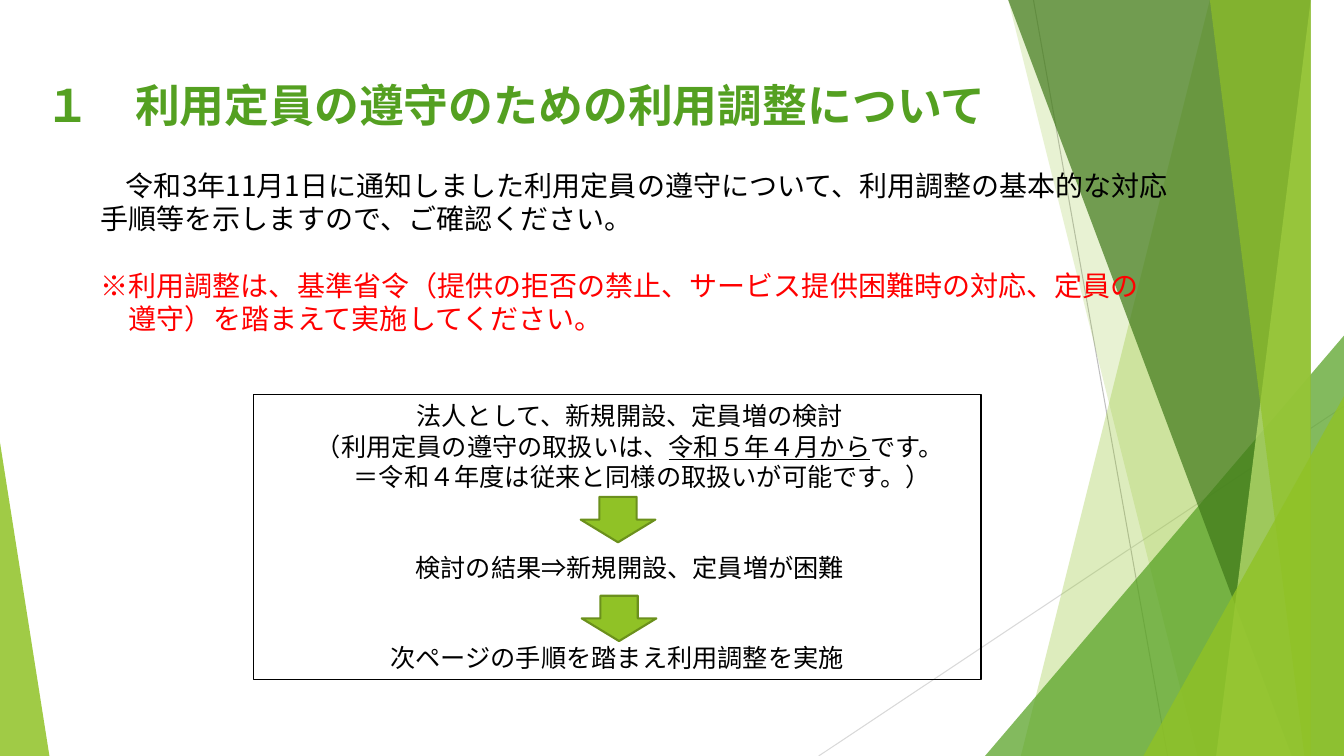
import dataclasses
import typing

import lxml.etree
import pptx
import pptx.dml.color
import pptx.enum.shapes
import pptx.enum.text
import pptx.oxml.ns
import pptx.util

Inches = pptx.util.Inches
Pt = pptx.util.Pt
MSO_SHAPE = pptx.enum.shapes.MSO_SHAPE
ANCHOR = pptx.enum.text.MSO_ANCHOR
ALIGN = pptx.enum.text.PP_ALIGN
qn = pptx.oxml.ns.qn

WIDTH, HEIGHT = 13.33, 7.5
FONT = "Noto Sans CJK JP"
LINE_RATIO = 1.2
COLORS = {
    "lime": "90C226", "green": "54A021", "forest": "3F7819", "pale": "C0E474",
    "arrow edge": "6B901C", "gray": "BFBFBF", "light gray": "D9D9D9",
    "black": "000000", "red": "FF0000",
}


@dataclasses.dataclass
class Ray:
    start: tuple[float, float]
    end: tuple[float, float]
    color: str


@dataclasses.dataclass
class Band:
    """A band from the top edge to the bottom edge, open to the right."""
    top_x: float
    bottom_x: float
    color: str
    opacity: int


@dataclasses.dataclass
class Corner:
    """A right triangle standing on the bottom edge; peak is 0 (left) or 1 (right)."""
    left: float
    top: float
    width: float
    peak: int
    color: str
    opacity: int


@dataclasses.dataclass
class Line:
    """A paragraph; odd phrases are underlined, indents are in inches."""
    phrases: list[str]
    margin: float = 0
    first_indent: float = 0
    lines_before: int = 0


RAYS = [
    Ray((10.25, 0), (11.58, HEIGHT), "gray"),
    Ray((WIDTH, 4.03), (8.12, HEIGHT), "light gray"),
]
FACETS = [
    Band(12.28, 10.04, "lime", 30),
    Band(10.5, 11.83, "lime", 20),
    Corner(9.77, 3.33, 3.56, 1, "green", 72),
    Band(10.21, 12.91, "forest", 70),
    Band(13.03, 11.92, "pale", 70),
    Band(11.96, 13.18, "lime", 65),
    Corner(11.34, 3.93, 1.99, 1, "lime", 80),
    Corner(0, 4.39, 0.49, 0, "lime", 85),
]
TITLE = [Line(["１　利用定員の遵守のための利用調整について"])]
INTRO = [Line(["令和3年11月1日に通知しました利用定員の遵守について、"
               "利用調整の基本的な対応手順等を示しますので、ご確認ください。"], first_indent=0.25)]
NOTE = [
    Line(["※利用調整は、基準省令（提供の拒否の禁止、サービス提供困難時の対応、定員の"]),
    Line(["遵守）を踏まえて実施してください。"], margin=0.28),
]
STEPS = [
    Line(["法人として、新規開設、定員増の検討"], margin=0.25),
    Line(["（利用定員の遵守の取扱いは、", "令和５年４月から", "です。"], margin=0.25),
    Line(["＝令和４年度は従来と同様の取扱いが可能です。）"], margin=0.5),
    Line(["検討の結果⇒新規開設、定員増が困難"], margin=0.25, lines_before=2),
    Line(["次ページの手順を踏まえ利用調整を実施"], lines_before=2),
]
ARROWS = [(5.76, 4.93), (5.77, 5.91)]


def rgb(name: str) -> pptx.dml.color.RGBColor:
    return pptx.dml.color.RGBColor.from_string(COLORS[name])


def add_ray(page: typing.Any, ray: Ray) -> None:
    points = [Inches(value) for value in ray.start + ray.end]
    connector = page.shapes.add_connector(pptx.enum.shapes.MSO_CONNECTOR.STRAIGHT, *points)
    connector.line.color.rgb = rgb(ray.color)
    connector.line.width = Pt(0.75)
    lxml.etree.SubElement(connector._element.spPr, qn("a:effectLst"))


def add_facet(page: typing.Any, facet: Band | Corner) -> None:
    if isinstance(facet, Band):
        builder = page.shapes.build_freeform(facet.top_x, 0, scale=Inches(1))
        builder.add_line_segments([(WIDTH, 0), (WIDTH, HEIGHT), (facet.bottom_x, HEIGHT)])
        shape = builder.convert_to_shape()
    else:
        shape = page.shapes.add_shape(
            MSO_SHAPE.ISOSCELES_TRIANGLE, Inches(facet.left), Inches(facet.top),
            Inches(facet.width), Inches(HEIGHT - facet.top))
        shape.adjustments[0] = facet.peak
    shape.shadow.inherit = False
    shape.line.fill.background()
    shape.fill.solid()
    shape.fill.fore_color.rgb = rgb(facet.color)
    color = shape._element.spPr.find(qn("a:solidFill"))[0]
    lxml.etree.SubElement(color, qn("a:alpha"), val=str(facet.opacity * 1000))


def write(shape: typing.Any, lines: list[Line], size: int, color: str, bold: bool = False,
          align: typing.Any = ALIGN.LEFT, anchor: typing.Any = ANCHOR.TOP) -> None:
    frame = shape.text_frame
    frame.word_wrap = True
    frame.auto_size = pptx.enum.text.MSO_AUTO_SIZE.NONE
    frame.vertical_anchor = anchor
    for index, line in enumerate(lines):
        para = frame.paragraphs[0] if index == 0 else frame.add_paragraph()
        para.alignment = align
        para.line_spacing = Pt(size * LINE_RATIO)
        para.space_before = Pt(size * LINE_RATIO * line.lines_before)
        properties = para._p.get_or_add_pPr()
        properties.set("marL", str(Inches(line.margin)))
        properties.set("indent", str(Inches(line.first_indent)))
        for number, phrase in enumerate(line.phrases):
            span = para.add_run()
            span.text = phrase
            span.font.size = Pt(size)
            span.font.bold = bold
            span.font.underline = number % 2 == 1
            span.font.color.rgb = rgb(color)
            span.font.name = FONT
            lxml.etree.SubElement(span.font._element, qn("a:ea"), typeface=FONT)


def add_arrow(page: typing.Any, left: float, top: float) -> None:
    arrow = page.shapes.add_shape(
        MSO_SHAPE.DOWN_ARROW, Inches(left), Inches(top), Inches(0.74), Inches(0.45))
    arrow.shadow.inherit = False
    arrow.fill.solid()
    arrow.fill.fore_color.rgb = rgb("lime")
    arrow.line.color.rgb = rgb("arrow edge")
    arrow.line.width = Pt(1.5)


def main() -> None:
    deck = pptx.Presentation()
    deck.slide_width, deck.slide_height = Inches(WIDTH), Inches(HEIGHT)
    page = deck.slides.add_slide(deck.slide_layouts.get_by_name("Title Only"))
    for ray in RAYS:
        add_ray(page, ray)
    for facet in FACETS:
        add_facet(page, facet)

    title = page.shapes.title
    title.left, title.top = Inches(0.35), Inches(0.72)
    title.width, title.height = Inches(9.66), Inches(0.64)
    write(title, TITLE, 32, "green", bold=True, anchor=ANCHOR.MIDDLE)

    note = page.shapes.add_textbox(Inches(0.9), Inches(2.61), Inches(11.22), Inches(0.77))
    write(note, NOTE, 20, "red")

    steps = page.shapes.add_shape(
        MSO_SHAPE.RECTANGLE, Inches(2.51), Inches(3.91), Inches(7.22), Inches(2.83))
    steps.shadow.inherit = False
    steps.fill.background()
    steps.line.color.rgb = rgb("black")
    steps.line.width = Pt(0.75)
    write(steps, STEPS, 18, "black", align=ALIGN.CENTER, anchor=ANCHOR.MIDDLE)

    intro = page.shapes.add_textbox(Inches(0.9), Inches(1.62), Inches(10.92), Inches(0.77))
    write(intro, INTRO, 20, "black")
    for left, top in ARROWS:
        add_arrow(page, left, top)
    deck.save("out.pptx")


if __name__ == "__main__":
    main()
